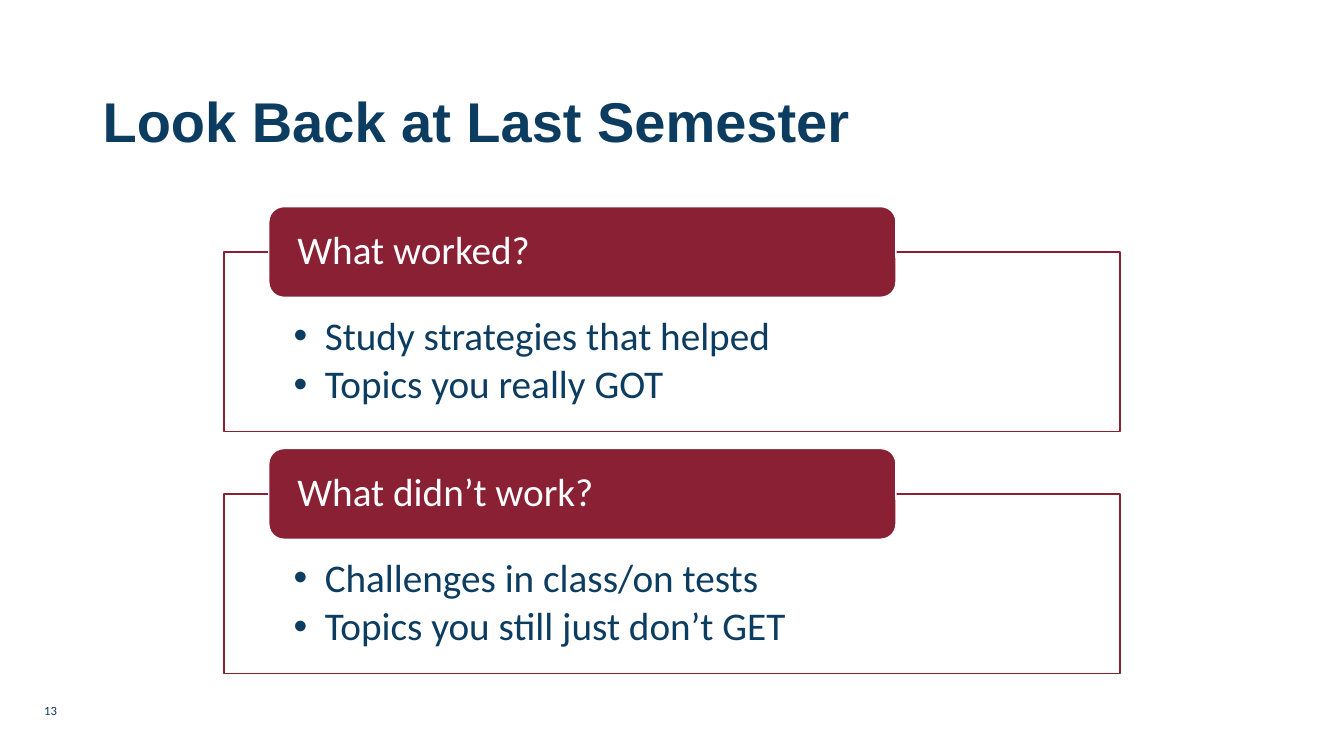
from lxml import etree
from pptx import Presentation
from pptx import util as u
from pptx.dml.color import RGBColor
from pptx.enum import shapes, text
from pptx.oxml.ns import qn

WIDTH, HEIGHT = 13.33, 7.5
COLORS = {"navy": "0C3C60", "maroon": "892034", "white": "FFFFFF"}
PANEL_LEFT, PANEL_WIDTH, PANEL_HEIGHT = WIDTH / 6, WIDTH * 2 / 3, 1.78
FIRST_PANEL_TOP, PANEL_PITCH = 2.5, 2.4
HEADER_HEIGHT = 0.9
SECTIONS = [
    ("What worked?", ["Study strategies that helped", "Topics you really GOT"]),
    ("What didn’t work?", ["Challenges in class/on tests", "Topics you still just don’t GET"]),
]


def color(name):
    return RGBColor.from_string(COLORS[name])


def add_bullet(para):
    properties = para._p.get_or_add_pPr()
    properties.set("marL", str(u.Inches(0.31)))
    properties.set("indent", str(u.Inches(-0.31)))
    etree.SubElement(properties, qn("a:buFont")).set("typeface", "Arial")
    etree.SubElement(properties, qn("a:buChar")).set("char", "•")


def write(box, lines, size, ink, font="Calibri", bold=False, anchor=text.MSO_ANCHOR.MIDDLE,
          insets=(0.1, 0.05, 0.1, 0.05), spacing=0.9, after=0, bullets=False):
    frame = box.text_frame
    frame.word_wrap = True
    frame.vertical_anchor = anchor
    frame.margin_left, frame.margin_top, frame.margin_right, frame.margin_bottom = map(u.Inches, insets)
    frame.text = "\n".join(lines)
    for para in frame.paragraphs:
        para.alignment = text.PP_ALIGN.LEFT
        para.line_spacing = spacing
        para.space_after = u.Pt(after)
        if bullets:
            add_bullet(para)
        for span in para.runs:
            span.font.name = font
            span.font.size = u.Pt(size)
            span.font.bold = bold
            span.font.color.rgb = color(ink)


def add_label(page, left, top, width, height, label, size, **style):
    box = page.shapes.add_textbox(*map(u.Inches, (left, top, width, height)))
    write(box, [label], size, "navy", **style)


def add_block(page, kind, left, top, width, height, fill, line):
    block = page.shapes.add_shape(kind, *map(u.Inches, (left, top, width, height)))
    block.shadow.inherit = False
    block.fill.solid()
    block.fill.fore_color.rgb = color(fill)
    block.line.color.rgb = color(line)
    block.line.width = u.Pt(1)
    return block


def set_opacity(block, percent):
    fill = block._element.spPr.find(qn("a:solidFill"))
    etree.SubElement(fill[0], qn("a:alpha")).set("val", str(percent * 1000))


def add_section(page, top, heading, points):
    panel = add_block(page, shapes.MSO_SHAPE.RECTANGLE, PANEL_LEFT, top,
                      PANEL_WIDTH, PANEL_HEIGHT, "white", "maroon")
    set_opacity(panel, 90)
    write(panel, points, 28, "navy", anchor=text.MSO_ANCHOR.TOP,
          insets=(0.69, 0.64, 0.69, 0.22), after=4.2, bullets=True)
    header = add_block(page, shapes.MSO_SHAPE.ROUNDED_RECTANGLE, PANEL_LEFT + PANEL_WIDTH * 0.05,
                       top - HEADER_HEIGHT / 2, PANEL_WIDTH * 0.7, HEADER_HEIGHT, "maroon", "white")
    write(header, [heading], 28, "white", insets=(0.24, 0, 0.24, 0))


def main():
    deck = Presentation()
    deck.slide_width, deck.slide_height = u.Inches(WIDTH), u.Inches(HEIGHT)
    page = deck.slides.add_slide(deck.slide_layouts[6])
    add_label(page, 0.92, 0.74, 11.5, 0.98, "Look Back at Last Semester", 40, font="Arial", bold=True)
    add_label(page, 0.34, 6.92, 2.25, 0.23, "13", 9, anchor=text.MSO_ANCHOR.TOP, spacing=1.0)
    for row, (heading, points) in enumerate(SECTIONS):
        add_section(page, FIRST_PANEL_TOP + row * PANEL_PITCH, heading, points)
    deck.save("out.pptx")


if __name__ == "__main__":
    main()
